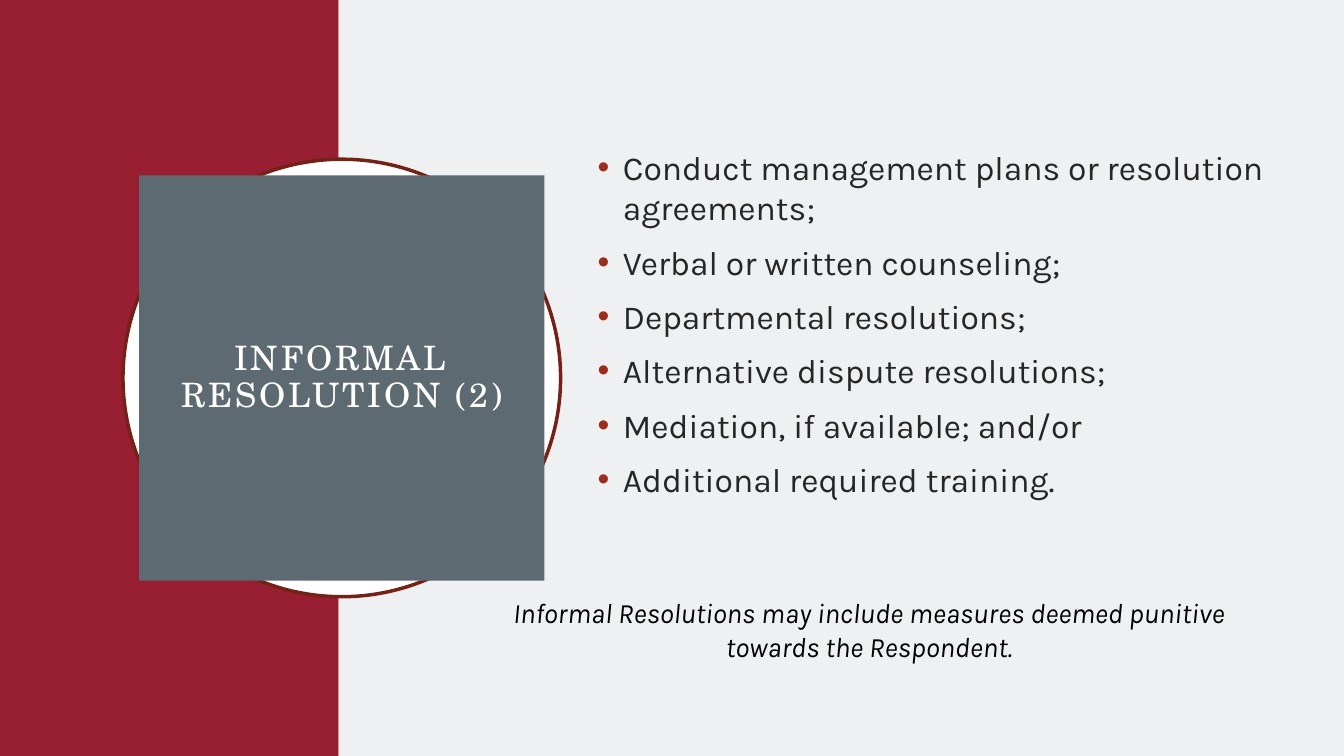
import dataclasses

import lxml.etree
import pptx
import pptx.dml.color
import pptx.enum.shapes
import pptx.enum.text
import pptx.oxml.ns
import pptx.util

Inches = pptx.util.Inches
Pt = pptx.util.Pt
SHAPE = pptx.enum.shapes.MSO_SHAPE
ALIGN = pptx.enum.text.PP_ALIGN
qn = pptx.oxml.ns.qn


@dataclasses.dataclass(frozen=True)
class Theme:
    band: str = "981E32"
    page: str = "EFF0F1"
    disc: str = "FFFFFF"
    ring: str = "742217"
    panel: str = "5E6A71"
    title: str = "FFFFFF"
    body: str = "262626"
    bullet: str = "9B2D1F"
    note: str = "000000"
    title_font: str = "TeX Gyre Schola"
    body_font: str = "Karla"
    title_size: int = 24
    body_size: int = 24
    note_size: int = 20


THEME = Theme()
WIDTH, HEIGHT = 13.33, 7.5
BAND_WIDTH = 3.36

TITLE = "INFORMAL RESOLUTION (2)"
MEASURES = [
    "Conduct management plans or resolution agreements;",
    "Verbal or written counseling;",
    "Departmental resolutions;",
    "Alternative dispute resolutions;",
    "Mediation, if available; and/or",
    "Additional required training.",
]
NOTE = [
    "Informal Resolutions may include measures deemed punitive ",
    "towards the Respondent. ",
]


def color(value):
    return pptx.dml.color.RGBColor.from_string(value)


def add_figure(page, kind, box, fill, line=None, line_width=2.5):
    figure = page.shapes.add_shape(kind, *map(Inches, box))
    figure.shadow.inherit = False
    figure.fill.solid()
    figure.fill.fore_color.rgb = color(fill)
    if line:
        figure.line.color.rgb = color(line)
        figure.line.width = Pt(line_width)
    else:
        figure.line.fill.background()
    return figure


def add_bullet(para, indent=0.25):
    properties = para._p.get_or_add_pPr()
    properties.set("marL", str(Inches(indent)))
    properties.set("indent", str(-Inches(indent)))
    bullet_color = lxml.etree.SubElement(properties, qn("a:buClr"))
    lxml.etree.SubElement(bullet_color, qn("a:srgbClr"), val=THEME.bullet)
    lxml.etree.SubElement(properties, qn("a:buFont"), typeface="Arial")
    lxml.etree.SubElement(properties, qn("a:buChar"), char="•")


def write_text(frame, lines, font, size, fill, align=ALIGN.LEFT, italic=False,
               anchor=pptx.enum.text.MSO_ANCHOR.TOP, line_spacing=None,
               space_before=0, tracking=0, bullets=False):
    frame.word_wrap = True
    frame.vertical_anchor = anchor
    for index, line in enumerate(lines):
        para = frame.paragraphs[0] if index == 0 else frame.add_paragraph()
        para.alignment = align
        para.space_before = Pt(space_before)
        if line_spacing:
            para.line_spacing = line_spacing
        if bullets:
            add_bullet(para)
        span = para.add_run()
        span.text = line
        span.font.name = font
        span.font.size = Pt(size)
        span.font.italic = italic
        span.font.color.rgb = color(fill)
        if tracking:
            span._r.get_or_add_rPr().set("spc", str(tracking * 100))


def add_backdrop(page, box):
    left, top, width, height = box
    add_figure(page, SHAPE.RECTANGLE, (left, top, BAND_WIDTH, height), THEME.band)
    add_figure(page, SHAPE.RECTANGLE,
               (left + BAND_WIDTH, top, width - BAND_WIDTH, height), THEME.page)


def add_title(page, box, margin=0.16, inset=0.2):
    # Ringed disc with the title panel centred on it
    left, top, width, height = box
    add_figure(page, SHAPE.OVAL, box, THEME.disc, line=THEME.ring)
    panel = add_figure(page, SHAPE.RECTANGLE,
                       (left + margin, top + margin,
                        width - 2 * margin, height - 2 * margin), THEME.panel)
    frame = panel.text_frame
    frame.margin_left = frame.margin_right = Inches(inset)
    frame.margin_top = frame.margin_bottom = Inches(inset)
    write_text(frame, [TITLE], THEME.title_font, THEME.title_size, THEME.title,
               align=ALIGN.CENTER, anchor=pptx.enum.text.MSO_ANCHOR.MIDDLE,
               line_spacing=0.9, tracking=2)


def add_measures(page, box):
    frame = page.shapes.add_textbox(*map(Inches, box)).text_frame
    write_text(frame, MEASURES, THEME.body_font, THEME.body_size, THEME.body,
               anchor=pptx.enum.text.MSO_ANCHOR.MIDDLE, space_before=10,
               bullets=True)


def add_note(page, box):
    frame = page.shapes.add_textbox(*map(Inches, box)).text_frame
    write_text(frame, NOTE, THEME.body_font, THEME.note_size, THEME.note,
               align=ALIGN.CENTER, italic=True)


def main():
    deck = pptx.Presentation()
    deck.slide_width, deck.slide_height = Inches(WIDTH), Inches(HEIGHT)
    page = deck.slides.add_slide(deck.slide_layouts[6])
    page.background.fill.solid()
    page.background.fill.fore_color.rgb = color(THEME.page)

    add_backdrop(page, (0, 0, WIDTH, HEIGHT))
    add_title(page, (1.22, 1.58, 4.34, 4.34))
    add_measures(page, (5.83, 1, 7.01, 4.41))
    add_note(page, (4.46, 5.86, 8.38, 0.77))
    deck.save("out.pptx")


if __name__ == "__main__":
    main()
